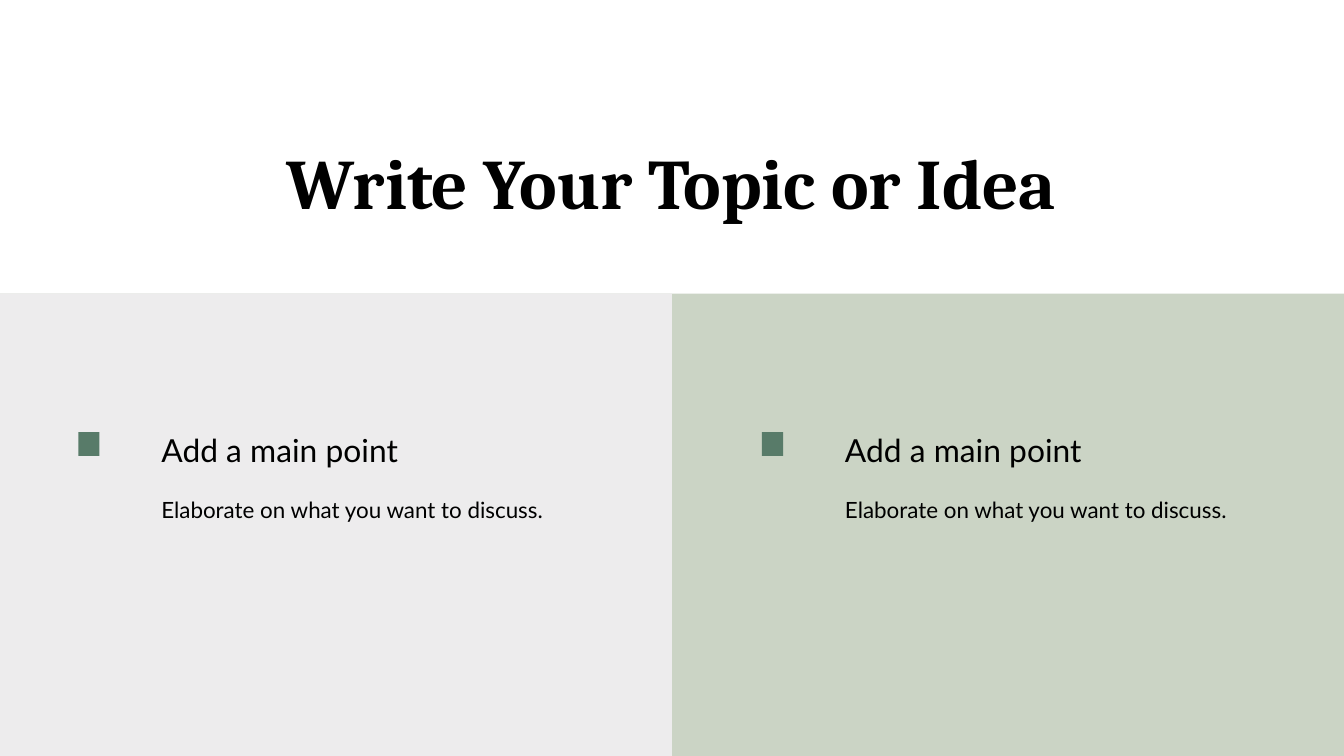
from dataclasses import dataclass

from pptx import Presentation
from pptx.dml.color import RGBColor
from pptx.enum.shapes import MSO_SHAPE
from pptx.enum.text import MSO_AUTO_SIZE, PP_ALIGN
from pptx.util import Cm, Pt


@dataclass(frozen=True)
class Theme:
    """Colours, fonts and type sizes of the slide."""

    ink: str = "000000"
    grey: str = "EDECED"
    sage: str = "CBD4C5"
    marker: str = "587B69"
    title_font: str = "Cambria"
    body_font: str = "Lato"
    title_size: int = 38
    heading_size: int = 17
    detail_size: int = 12


THEME = Theme()


def add_block(shapes, left, top, width, height, color):
    """Draw a plain filled rectangle, in centimetres."""
    block = shapes.add_shape(
        MSO_SHAPE.RECTANGLE, Cm(left), Cm(top), Cm(width), Cm(height)
    )
    block.shadow.inherit = False
    block.fill.solid()
    block.fill.fore_color.rgb = RGBColor.from_string(color)
    block.line.fill.background()


def add_text(shapes, box, text, font_name, size, spacing=1.15,
             alignment=PP_ALIGN.LEFT, bold=False):
    """Place one line of text in a box without margins."""
    text_frame = shapes.add_textbox(*(Cm(length) for length in box)).text_frame
    text_frame.margin_left = text_frame.margin_right = 0
    text_frame.margin_top = text_frame.margin_bottom = 0
    text_frame.word_wrap = True
    text_frame.auto_size = MSO_AUTO_SIZE.SHAPE_TO_FIT_TEXT
    text_frame.text = text
    paragraph = text_frame.paragraphs[0]
    paragraph.alignment = alignment
    paragraph.line_spacing = spacing
    font = paragraph.runs[0].font
    font.name = font_name
    font.size = Pt(size)
    font.bold = bold
    font.color.rgb = RGBColor.from_string(THEME.ink)


def add_background(slide, left, top, width, height):
    """Fill the box with sage and cover its left half with grey."""
    shapes = slide.shapes.add_group_shape().shapes
    add_block(shapes, left, top, width, height, THEME.sage)
    add_block(shapes, left, top, width / 2, height, THEME.grey)


def add_title(slide, left, top, width, height, text):
    """Centre the slide title in the box."""
    add_text(slide.shapes, (left, top, width, height), text, THEME.title_font,
             THEME.title_size, 1.2, PP_ALIGN.CENTER, True)


def add_point(slide, left, top, width, heading, detail):
    """Place a square marker beside a heading and its detail."""
    indent = 1.57
    shapes = slide.shapes.add_group_shape().shapes
    add_block(shapes, left, top + 0.13, 0.4, 0.45, THEME.marker)
    text_left, text_width = left + indent, width - indent
    add_text(shapes, (text_left, top, text_width, 0.74), heading,
             THEME.body_font, THEME.heading_size)
    add_text(shapes, (text_left, top + 1.27, text_width, 0.51), detail,
             THEME.body_font, THEME.detail_size)


def main():
    """Build and save the slide."""
    presentation = Presentation()
    presentation.slide_width, presentation.slide_height = Cm(25.4), Cm(14.29)
    slide = presentation.slides.add_slide(presentation.slide_layouts[6])
    add_background(slide, 0, 5.55, 25.4, 8.86)
    add_title(slide, 3.46, 2.29, 18.47, 1.63, "Write Your Topic or Idea")
    for left in (1.48, 14.4):
        add_point(slide, left, 8.04, 9.52, "Add a main point",
                  "Elaborate on what you want to discuss.")
    presentation.save("out.pptx")


if __name__ == "__main__":
    main()
